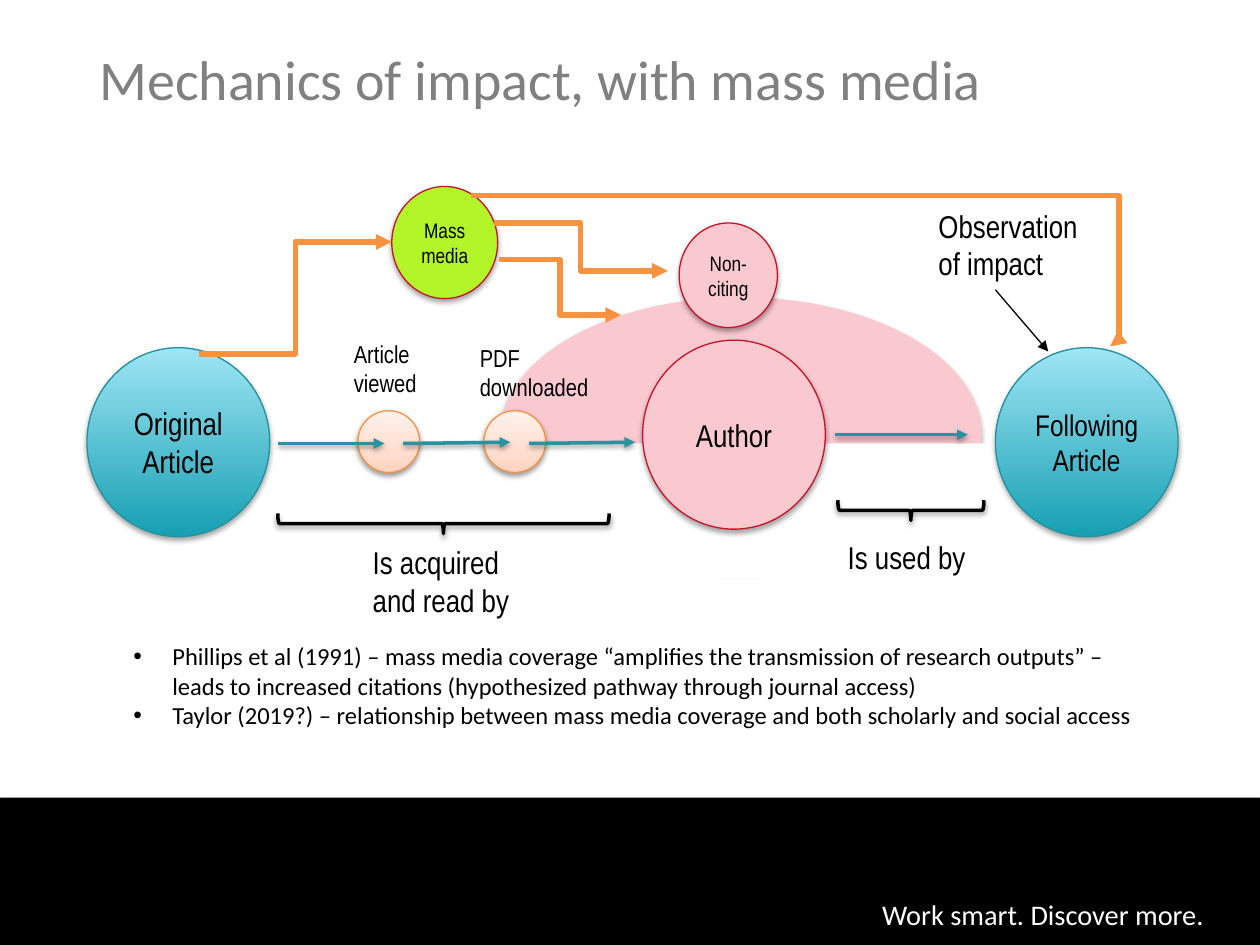
"""Build the slide on mechanics of impact with mass media."""
from lxml.etree import SubElement
from pptx import Presentation
from pptx.dml.color import RGBColor
from pptx.enum.shapes import MSO_CONNECTOR, MSO_SHAPE
from pptx.enum.text import MSO_ANCHOR, PP_ALIGN
from pptx.oxml.ns import qn
from pptx.util import Inches, Pt

THEME = {
    "black": "000000", "white": "FFFFFF", "grey": "808080", "pink": "FAC9D0",
    "red": "C91129", "lime": "B2F62A", "orange": "F69240", "teal": "24919F",
    "arrow": "2892A0",
    "blue": [(0, "16A0B2"), (100, "9FE5F5")],
    "peach": [(0, "FFD2BD"), (35, "FFDED0"), (100, "FFF2ED")],
    "narrow": "Arial Narrow", "sans": "Calibri",
    "title": 32, "tagline": 28, "label": 18, "following": 17, "note": 14, "small": 12,
}
SOFT, CRISP = (35, 1.8), (38, 1.6)

SHAPES = [
    ("RECTANGLE", (0, 6.33, 10, 1.17), "black", None, SOFT),
    ("OVAL", (3.97, 2.36, 3.82, 2.17), "pink", None, SOFT),
    ("RECTANGLE", (3.59, 3.52, 4.27, 1.07), "white", None, None),
    ("OVAL", (3.84, 3.26, 0.49, 0.49), "peach", "orange", CRISP),
    ("OVAL", (2.84, 3.26, 0.49, 0.49), "peach", "orange", CRISP),
    ("OVAL", (0.69, 2.76, 1.45, 1.5), "blue", "teal", SOFT, "Original Article", "label"),
    ("OVAL", (5.1, 2.7, 1.45, 1.5), "pink", "red", SOFT, "Author", "label"),
    ("OVAL", (7.9, 2.76, 1.45, 1.5), "blue", "teal", SOFT, "Following Article", "following"),
    ("OVAL", (5.39, 1.77, 0.78, 0.83), "pink", "red", SOFT, "Non-citing", "small"),
    ("OVAL", (3.11, 1.48, 0.84, 0.89), "lime", "red", SOFT, "Mass media", "small"),
]
BRACES = [(3.44, 2.84, 0.16, 2.63), (7.15, 3.47, 0.16, 1.16)]
FLOWS = [
    (2.21, 3.52, 3.05, 3.52), (3.2, 3.52, 4.05, 3.51),
    (4.2, 3.52, 5.04, 3.51), (6.63, 3.45, 7.68, 3.45),
]
POINTER = (7.9, 2.3, 8.32, 2.79)
BENDS = [
    ((1.58, 2.81, 3.11, 1.92), 0.5), ((3.74, 1.55, 8.81, 2.75), 1.014),
    ((3.96, 2.06, 4.93, 2.5), 0.5), ((3.92, 1.77, 5.3, 2.15), 0.5),
]
LABELS = [
    ("Is acquired and read by", (2.86, 4.26, 1.5, 0.71), "label"),
    ("Observation of impact", (7.35, 1.59, 1.5, 0.71), "label"),
    ("Is used by", (6.63, 4.22, 1.5, 0.4), "label"),
    ("Article viewed", (2.71, 2.64, 0.71, 0.57), "note"),
    ("PDF downloaded", (3.71, 2.67, 1.06, 0.57), "note"),
]
TITLE = "Mechanics of impact, with mass media"
TAGLINE = "Work smart. Discover more."
NOTES = [
    "Phillips et al (1991) – mass media coverage “amplifies the transmission of research "
    "outputs” – leads to increased citations (hypothesized pathway through journal access)",
    "Taylor (2019?) – relationship between mass media coverage and both scholarly and social access",
]


def rgb(name):
    return RGBColor.from_string(THEME[name])


def set_shadow(s, shadow):
    effects = SubElement(s._element.spPr, qn("a:effectLst"))
    if shadow:
        alpha, dist = shadow
        outer = SubElement(effects, qn("a:outerShdw"), blurRad=str(Pt(3.1)),
                           dist=str(Pt(dist)), dir="5400000", rotWithShape="0")
        clr = SubElement(outer, qn("a:srgbClr"), val=THEME["black"])
        SubElement(clr, qn("a:alpha"), val=str(alpha * 1000))


def set_fill(s, name):
    if name is None:
        s.fill.background()
    elif isinstance(THEME[name], str):
        s.fill.solid()
        s.fill.fore_color.rgb = rgb(name)
    else:
        s.fill.gradient()
        s.fill.gradient_angle = 90
        stops = s._element.spPr.find(".//" + qn("a:gsLst"))
        stops.clear()
        for pos, color in THEME[name]:
            gs = SubElement(stops, qn("a:gs"), pos=str(pos * 1000))
            SubElement(gs, qn("a:srgbClr"), val=color)


def set_line(s, name, width):
    if name is None:
        s.line.fill.background()
    else:
        s.line.color.rgb = rgb(name)
        s.line.width = Pt(width)


def write(s, texts, size, font="narrow", color="black", align=PP_ALIGN.LEFT,
          anchor=MSO_ANCHOR.TOP, bullet=False):
    tf = s.text_frame
    for key, value in {"word_wrap": True, "vertical_anchor": anchor}.items():
        setattr(tf, key, value)
    for i, text in enumerate(texts):
        p = tf.add_paragraph() if i else tf.paragraphs[0]
        p.alignment = align
        if bullet:
            pPr = p._p.get_or_add_pPr()
            pPr.set("marL", str(Inches(0.31)))
            pPr.set("indent", str(Inches(-0.31)))
            SubElement(pPr, qn("a:buFont"), typeface="Arial")
            SubElement(pPr, qn("a:buChar"), char="•")
        r = p.add_run()
        r.text = text
        for key, value in {"name": THEME[font], "size": Pt(THEME[size])}.items():
            setattr(r.font, key, value)
        r.font.color.rgb = rgb(color)
    return tf


def add_shape(slide, kind, box, fill, line, shadow, text=None, size=None, width=0.75):
    s = slide.shapes.add_shape(getattr(MSO_SHAPE, kind), *map(Inches, box))
    set_fill(s, fill)
    set_line(s, line, width)
    set_shadow(s, shadow)
    if text:
        write(s, [text], size, align=PP_ALIGN.CENTER, anchor=MSO_ANCHOR.MIDDLE)
    return s


def add_arrow(slide, ends, color, width, shadow=None, bend=None):
    kind = MSO_CONNECTOR.ELBOW if bend else MSO_CONNECTOR.STRAIGHT
    s = slide.shapes.add_connector(kind, *map(Inches, ends))
    set_line(s, color, width)
    SubElement(s.line._get_or_add_ln(), qn("a:tailEnd"), type="triangle")
    set_shadow(s, shadow)
    if bend:
        guides = s._element.spPr.find(".//" + qn("a:avLst"))
        SubElement(guides, qn("a:gd"), name="adj1", fmla=f"val {round(bend * 100000)}")


def add_text(slide, box, texts, size, **style):
    return write(slide.shapes.add_textbox(*map(Inches, box)), texts, size, **style)


def main():
    prs = Presentation()
    prs.slide_width, prs.slide_height = Inches(10), Inches(7.5)
    slide = prs.slides.add_slide(prs.slide_layouts[6])
    for item in SHAPES:
        add_shape(slide, *item)
    for box in BRACES:
        s = add_shape(slide, "LEFT_BRACE", box, None, "black", CRISP, width=2)
        s.rotation = 270
    for ends in FLOWS:
        add_arrow(slide, ends, "arrow", 2, CRISP)
    add_arrow(slide, POINTER, "black", 0.75)
    for ends, bend in BENDS:
        add_arrow(slide, ends, "orange", 3, bend=bend)
    for text, box, size in LABELS:
        add_text(slide, box, [text], size)
    add_text(slide, (0.69, 0, 9.01, 1.24), [TITLE], "title", font="sans",
             color="grey", anchor=MSO_ANCHOR.MIDDLE)
    add_text(slide, (0.96, 5.04, 8.28, 0.81), NOTES, "note", font="sans", bullet=True)
    tf = add_text(slide, (6.5, 7.02, 3.15, 0.42), [TAGLINE], "tagline", font="sans",
                  color="white", align=PP_ALIGN.RIGHT)
    tf.word_wrap = False
    tf.paragraphs[0].runs[0].font._element.set("baseline", "30000")
    prs.save("out.pptx")


if __name__ == "__main__":
    main()
